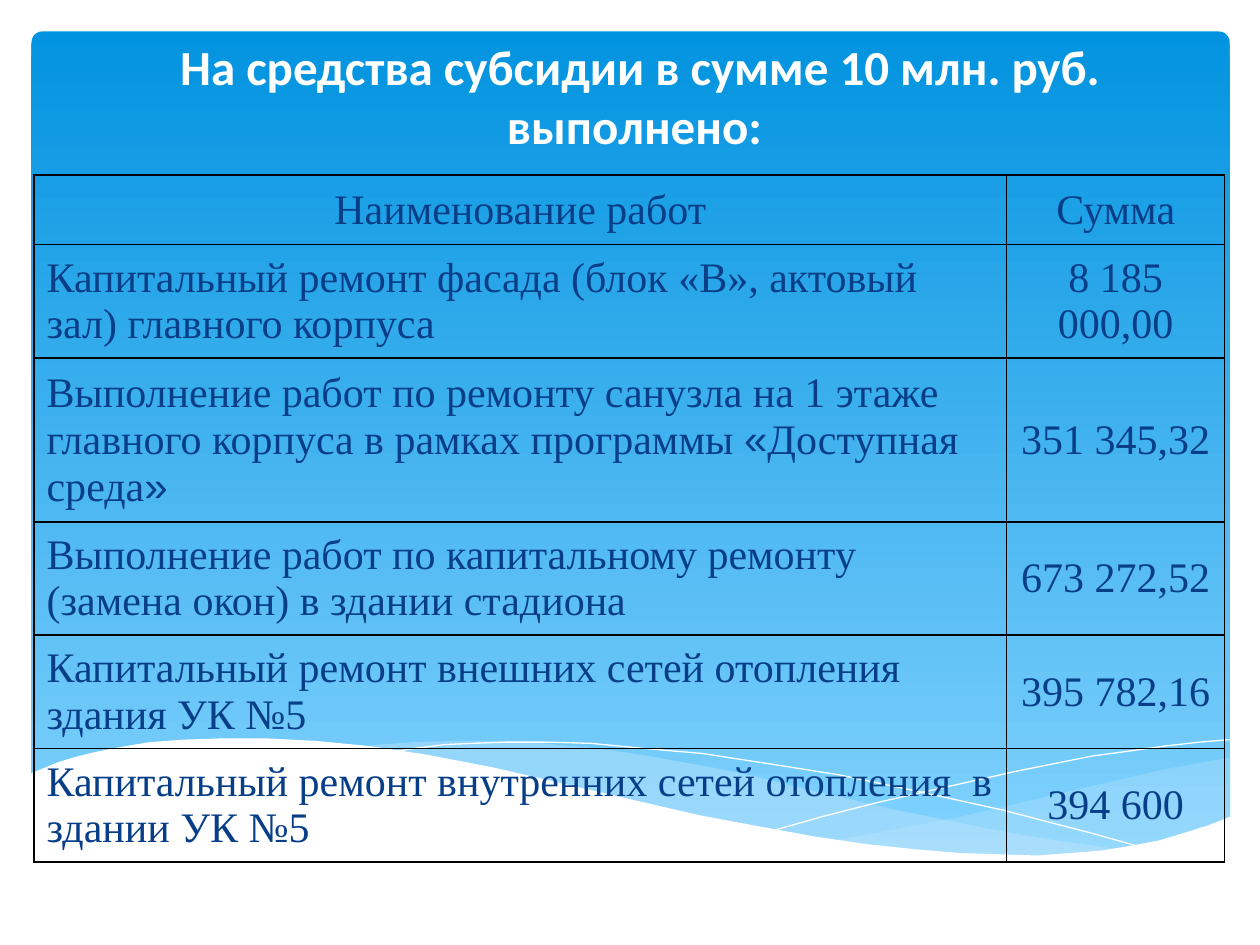
from lxml import etree
from pptx import Presentation
from pptx.dml.color import RGBColor
from pptx.enum.shapes import MSO_SHAPE
from pptx.enum.text import MSO_ANCHOR, PP_ALIGN
from pptx.oxml.ns import qn
from pptx.util import Inches, Pt

ROUNDED = MSO_SHAPE.ROUNDED_RECTANGLE
MIDDLE = MSO_ANCHOR.MIDDLE
CENTER = PP_ALIGN.CENTER
LEFT = PP_ALIGN.LEFT

WHITE = RGBColor(0xFF, 0xFF, 0xFF)
SKY_TOP = RGBColor(0x02, 0x93, 0xE0)
SKY_BOTTOM = RGBColor(0x83, 0xD3, 0xFE)
PALE_BLUE = RGBColor(0xC6, 0xE7, 0xFC)
NAVY = RGBColor(0x07, 0x3E, 0x87)
BORDER = "000000"

TITLE = " На средства субсидии в сумме 10 млн. руб. выполнено:"
COLUMN_WIDTHS = [7.72, 1.73]
ROW_HEIGHTS = [0.55, 0.87, 1.26, 0.87, 0.87, 0.87]
WORKS = [
    ("Наименование работ", "Сумма"),
    ("Капитальный ремонт фасада (блок «В», актовый зал) главного корпуса",
     "8 185 000,00"),
    (("Выполнение работ по ремонту санузла на 1 этаже главного корпуса "
      "в рамках программы ", "«", "Доступная среда", "»"), "351 345,32"),
    ("Выполнение работ по капитальному ремонту (замена окон) в здании стадиона",
     "673 272,52"),
    ("Капитальный ремонт внешних сетей отопления здания УК №5", "395 782,16"),
    ("Капитальный ремонт внутренних сетей отопления  в здании УК №5", "394 600"),
]

RIGHT_WAVE = [
    (9.54, 0.15), (9.27, 0.2), (8.99, 0.25), (8.69, 0.32), (8.39, 0.39),
    (7.83, 0.52), (7.31, 0.64), (6.84, 0.73), (6.39, 0.81), (6.69, 0.85),
    (6.96, 0.88), (7.22, 0.91), (7.47, 0.93), (7.7, 0.93), (7.92, 0.94),
    (8.13, 0.93), (8.32, 0.93), (8.5, 0.91), (8.67, 0.89), (8.84, 0.86),
    (8.99, 0.81), (9.14, 0.77), (9.28, 0.73), (9.41, 0.68), (9.54, 0.63),
]
MIDDLE_WAVE = [
    (8.71, 0.89), (8.44, 0.85), (8.15, 0.81), (7.85, 0.76), (7.53, 0.7),
    (7.19, 0.63), (6.84, 0.56), (6.46, 0.47), (6.07, 0.38), (5.76, 0.3),
    (5.47, 0.24), (5.19, 0.19), (4.92, 0.14), (4.66, 0.1), (4.42, 0.07),
    (4.19, 0.05), (3.97, 0.03), (3.77, 0.02), (3.39, 0.02), (3.05, 0.03),
    (2.77, 0.05), (2.64, 0.07), (3, 0.12), (3.4, 0.19), (3.82, 0.27),
    (4.27, 0.38), (4.68, 0.48), (5.07, 0.56), (5.44, 0.64), (5.79, 0.71),
    (6.12, 0.77), (6.43, 0.82), (6.73, 0.86), (7, 0.9), (7.26, 0.92),
    (7.51, 0.93), (7.74, 0.94), (8.06, 0.94), (8.36, 0.93), (8.71, 0.89),
]
FALLING_LINE = [
    (2.87, 0.11), (3.06, 0.08), (3.3, 0.05), (3.52, 0.04), (3.79, 0.03),
    (4.1, 0.03), (4.46, 0.04), (4.88, 0.08), (5.34, 0.12), (5.86, 0.2),
    (6.43, 0.29), (7.05, 0.42), (7.73, 0.57), (8.46, 0.76), (8.85, 0.87),
]
RISING_LINE = [
    (5.91, 0.73), (6.3, 0.62), (6.73, 0.51), (7.26, 0.39), (7.84, 0.26),
    (8.44, 0.14), (8.74, 0.1), (9.02, 0.06), (9.29, 0.03), (9.53, 0.01),
]
WHITE_WAVE = [
    (9.54, 0.62), (9.36, 0.69), (9.17, 0.75), (8.97, 0.81), (8.76, 0.85),
    (8.52, 0.89), (8.27, 0.91), (8, 0.93), (7.7, 0.92), (7.38, 0.91),
    (7.03, 0.88), (6.65, 0.84), (6.24, 0.78), (5.8, 0.7), (5.32, 0.61),
    (4.8, 0.49), (4.24, 0.36), (3.68, 0.23), (3.16, 0.13), (2.69, 0.06),
    (2.27, 0.02), (1.88, 0), (1.54, 0), (1.23, 0.01), (0.96, 0.03),
    (0.72, 0.07), (0.52, 0.11), (0.36, 0.15), (0.23, 0.19), (0.06, 0.26),
    (0, 0.29), (0, 1.45), (9.54, 1.45),
]


def add_sky(slide, left, top, width, height):
    sky = slide.shapes.add_shape(ROUNDED, left, top, width, height)
    sky.adjustments[0] = 0.013
    sky.shadow.inherit = False
    sky.line.fill.background()
    sky.fill.gradient()
    sky.fill.gradient_angle = 270
    for stop, color in zip(sky.fill.gradient_stops, (SKY_TOP, SKY_BOTTOM)):
        stop.color.rgb = color


def add_outline(group, left, top, points, close):
    corners = [(left + Inches(x), top + Inches(y)) for x, y in points]
    builder = group.shapes.build_freeform(*corners[0])
    builder.add_line_segments(corners[1:], close=close)
    shape = builder.convert_to_shape()
    shape.shadow.inherit = False
    return shape


def add_wave(group, left, top, points, color, opacity=100):
    wave = add_outline(group, left, top, points, True)
    wave.line.fill.background()
    wave.fill.solid()
    wave.fill.fore_color.rgb = color
    if opacity < 100:
        color_element = wave.fill._xPr.find(".//" + qn("a:srgbClr"))
        etree.SubElement(color_element, qn("a:alpha"), val=str(opacity * 1000))


def add_wave_line(group, left, top, points):
    curve = add_outline(group, left, top, points, False)
    curve.fill.background()
    curve.line.color.rgb = WHITE
    curve.line.width = Pt(0)


def add_waves(slide, left, top):
    group = slide.shapes.add_group_shape()
    add_wave(group, left, top, RIGHT_WAVE, PALE_BLUE, 29)
    add_wave(group, left, top, MIDDLE_WAVE, PALE_BLUE, 40)
    add_wave_line(group, left, top, FALLING_LINE)
    add_wave_line(group, left, top, RISING_LINE)
    add_wave(group, left, top, WHITE_WAVE, WHITE)


def add_title(slide, left, top, width, height):
    frame = slide.shapes.add_textbox(left, top, width, height).text_frame
    frame.word_wrap = True
    frame.vertical_anchor = MIDDLE
    paragraph = frame.paragraphs[0]
    paragraph.text = TITLE
    paragraph.alignment = CENTER
    paragraph.font.name = "Calibri"
    paragraph.font.size = Pt(28)
    paragraph.font.bold = True
    paragraph.font.color.rgb = WHITE


def add_borders(cell):
    properties = cell._tc.get_or_add_tcPr()
    for side in ("a:lnL", "a:lnR", "a:lnT", "a:lnB"):
        line = etree.SubElement(properties, qn(side), w=str(Pt(1)))
        fill = etree.SubElement(line, qn("a:solidFill"))
        etree.SubElement(fill, qn("a:srgbClr"), val=BORDER)


def fill_cell(cell, content, alignment):
    add_borders(cell)
    cell.fill.background()
    cell.vertical_anchor = MIDDLE
    paragraph = cell.text_frame.paragraphs[0]
    paragraph.alignment = alignment
    paragraph.font.name = "Times New Roman"
    paragraph.font.size = Pt(24)
    paragraph.font.color.rgb = NAVY
    parts = [content] if isinstance(content, str) else content
    for part in parts:
        run = paragraph.add_run()
        run.text = part
        if part in "«»":
            run.font.name = "Arial"


def add_works_table(slide, left, top, width, height):
    table = slide.shapes.add_table(
        len(WORKS), len(COLUMN_WIDTHS), left, top, width, height).table
    table.first_row = False
    table.horz_banding = False
    for column, column_width in zip(table.columns, COLUMN_WIDTHS):
        column.width = Inches(column_width)
    for row_index, (row, contents) in enumerate(zip(table.rows, WORKS)):
        row.height = Inches(ROW_HEIGHTS[row_index])
        for column_index, content in enumerate(contents):
            is_name = row_index > 0 and column_index == 0
            fill_cell(row.cells[column_index], content, LEFT if is_name else CENTER)


def main():
    presentation = Presentation()
    presentation.slide_width = Inches(10)
    presentation.slide_height = Inches(7.5)
    slide = presentation.slides.add_slide(presentation.slide_layouts[6])
    add_sky(slide, Inches(0.25), Inches(0.25), Inches(9.51), Inches(6.6))
    add_waves(slide, Inches(0.23), Inches(5.86))
    add_title(slide, Inches(0.27), Inches(0.37), Inches(9.53), Inches(0.78))
    add_works_table(slide, Inches(0.27), Inches(1.39), Inches(9.45), Inches(5.29))
    presentation.save("out.pptx")


if __name__ == "__main__":
    main()
